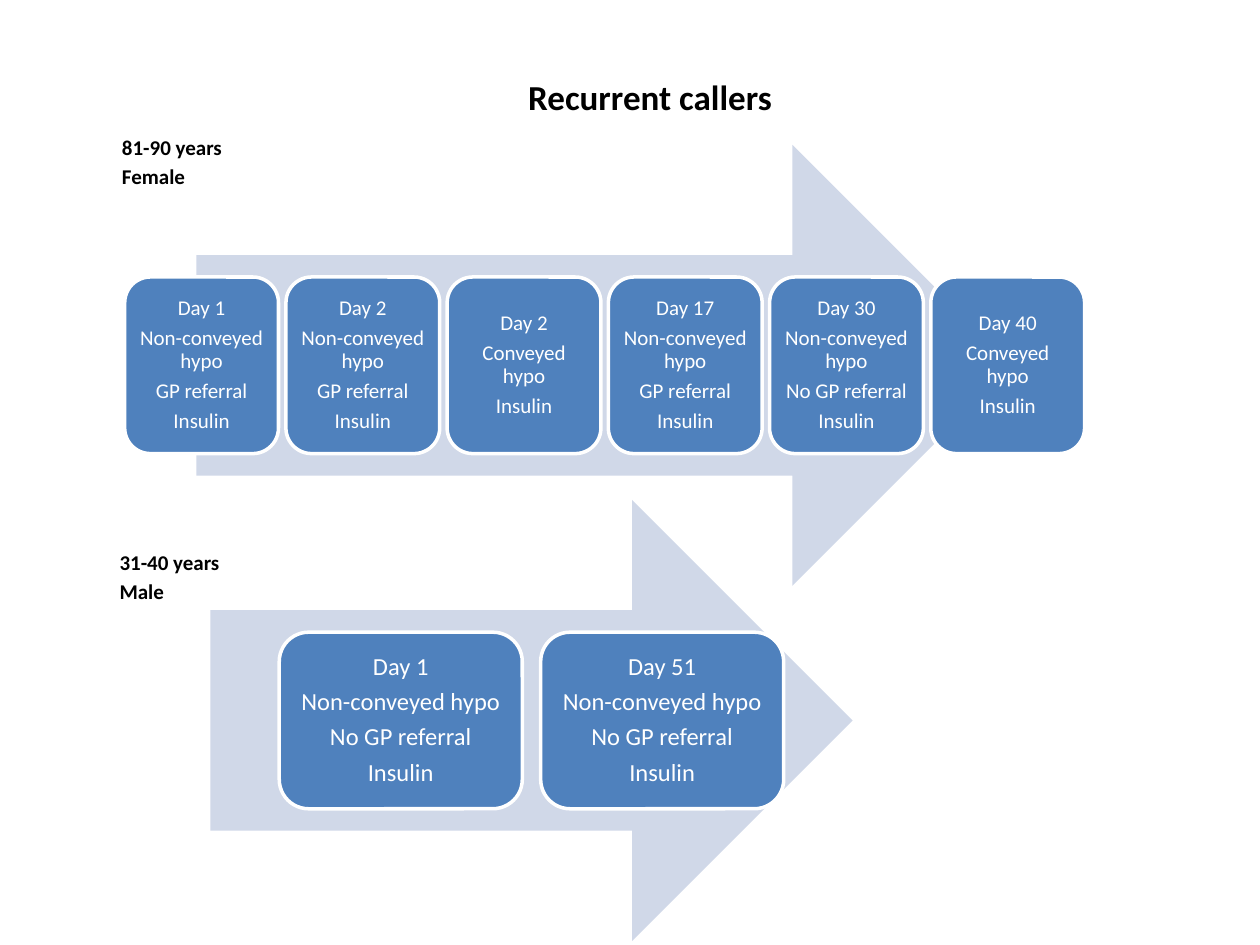
from pptx import Presentation
from pptx.dml.color import RGBColor
from pptx.enum.shapes import MSO_SHAPE
from pptx.enum.text import MSO_ANCHOR, PP_ALIGN
from pptx.util import Cm, Pt

BLACK = RGBColor(0x00, 0x00, 0x00)
WHITE = RGBColor(0xFF, 0xFF, 0xFF)
BLUE = RGBColor(0x4F, 0x81, 0xBD)
PALE_BLUE = RGBColor(0xD0, 0xD8, 0xE8)

ARROW_HEIGHT = 8.89
CALL_HEIGHT = 3.56


def write(frame, lines, size, color=BLACK, bold=False, align=PP_ALIGN.LEFT,
          anchor=MSO_ANCHOR.TOP, spacing=1.0, after=0, inset=None):
    frame.word_wrap = True
    frame.vertical_anchor = anchor
    if inset is not None:
        frame.margin_left = frame.margin_right = Cm(inset)
        frame.margin_top = frame.margin_bottom = Cm(inset)
    frame.text = "\n".join(lines)
    for paragraph in frame.paragraphs:
        paragraph.alignment = align
        paragraph.line_spacing = spacing
        paragraph.space_before = Pt(0)
        paragraph.space_after = Pt(after)
        font = paragraph.runs[0].font
        font.name = "Calibri"
        font.size = Pt(size)
        font.bold = bold
        font.color.rgb = color


def add_filled(shapes, preset, left, top, width, height, color):
    shape = shapes.add_shape(preset, Cm(left), Cm(top), Cm(width), Cm(height))
    shape.shadow.inherit = False
    shape.fill.solid()
    shape.fill.fore_color.rgb = color
    shape.line.fill.background()
    return shape


prs = Presentation()
prs.slide_width, prs.slide_height = Cm(25.4), Cm(19.05)
slide = prs.slides.add_slide(prs.slide_layouts[5])

heading = slide.shapes.title
heading.left, heading.top = Cm(4.9), Cm(1.4)
heading.width, heading.height = Cm(16.41), Cm(1.12)
write(heading.text_frame, ["Recurrent callers"], 20, bold=True, align=PP_ALIGN.CENTER)

callers = [
    (["81-90 years", "Female"], 2.21, 2.51),
    (["31-40 years", "Male"], 2.16, 10.87),
]
for caller, left, top in callers:
    label = slide.shapes.add_textbox(Cm(left), Cm(top), Cm(6.38), Cm(1.32))
    label.fill.solid()
    label.fill.fore_color.rgb = WHITE
    write(label.text_frame, caller, 12, bold=True, spacing=1.15)

female_calls = [
    ["Day 1", "Non-conveyed hypo", "GP referral", "Insulin"],
    ["Day 2", "Non-conveyed hypo", "GP referral", "Insulin"],
    ["Day 2", "Conveyed hypo", "Insulin"],
    ["Day 17", "Non-conveyed hypo", "GP referral", "Insulin"],
    ["Day 30", "Non-conveyed hypo", "No GP referral", "Insulin"],
    ["Day 40", "Conveyed hypo", "Insulin"],
]
male_calls = [
    ["Day 1", "Non-conveyed hypo", "No GP referral", "Insulin"],
    ["Day 51", "Non-conveyed hypo", "No GP referral", "Insulin"],
]
timelines = [
    (female_calls, 3.96, 2.92, 16.46, 3.1, 3.25, 12, 0.13),
    (male_calls, 4.24, 10.08, 12.95, 4.9, 5.27, 14, 0.15),
]
for calls, left, top, length, call_width, pitch, size, inset in timelines:
    timeline = slide.shapes.add_group_shape().shapes
    add_filled(timeline, MSO_SHAPE.RIGHT_ARROW, left, top, length, ARROW_HEIGHT, PALE_BLUE)
    row_width = pitch * (len(calls) - 1) + call_width
    row_left = left + (length - row_width) / 2
    row_top = top + (ARROW_HEIGHT - CALL_HEIGHT) / 2
    for i, lines in enumerate(calls):
        call = add_filled(timeline, MSO_SHAPE.ROUNDED_RECTANGLE, row_left + i * pitch,
                          row_top, call_width, CALL_HEIGHT, BLUE)
        call.line.color.rgb = WHITE
        call.line.width = Pt(2)
        write(call.text_frame, lines, size, color=WHITE, align=PP_ALIGN.CENTER,
              anchor=MSO_ANCHOR.MIDDLE, spacing=0.9, after=0.35 * size, inset=inset)

prs.save("out.pptx")
